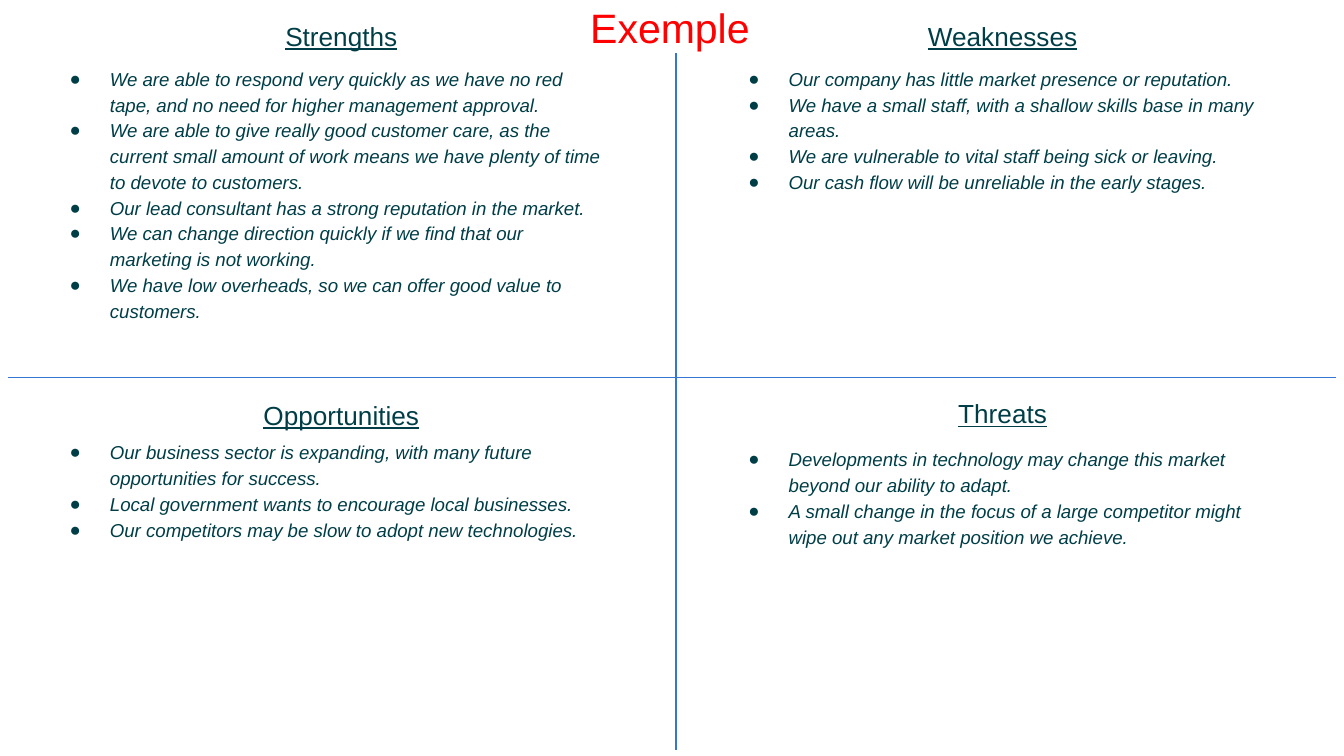
"""Builds a SWOT slide with four quadrants around a central title."""
import pptx
import pptx.dml.color
import pptx.enum.shapes
import pptx.enum.text
import pptx.oxml
import pptx.oxml.ns
import pptx.util

TEAL = pptx.dml.color.RGBColor(0x00, 0x3E, 0x47)
BLUE = pptx.dml.color.RGBColor(0x35, 0x75, 0xD3)
RED = pptx.dml.color.RGBColor(0xFF, 0x00, 0x00)
WHITE = pptx.dml.color.RGBColor(0xFF, 0xFF, 0xFF)
NS = pptx.oxml.ns.nsdecls("a")

deck = pptx.Presentation()
deck.slide_width = pptx.util.Inches(10)
deck.slide_height = deck.slide_width * 9 // 16
unit = deck.slide_width // 100
slide = deck.slides.add_slide(deck.slide_layouts[5])


def place(shape, left, top, width, height, pad):
    shape.left, shape.top = int(left * unit), int(top * unit)
    shape.width, shape.height = int(width * unit), int(height * unit)
    frame = shape.text_frame
    frame.word_wrap = True
    frame.auto_size = pptx.enum.text.MSO_AUTO_SIZE.SHAPE_TO_FIT_TEXT
    frame.vertical_anchor = pptx.enum.text.MSO_ANCHOR.TOP
    frame.margin_left = frame.margin_right = unit
    frame.margin_top = frame.margin_bottom = int(pad * unit)
    return frame


def style(para, size, color):
    font = para.runs[0].font
    font.size = pptx.util.Pt(size)
    font.color.rgb = color
    font.name = "Arial"
    return font


for ends in [(0.6, 28.1, 99.4, 28.1), (50.3, 0.5, 50.3, 55.8)]:
    line = slide.shapes.add_connector(
        pptx.enum.shapes.MSO_CONNECTOR.STRAIGHT, *[int(n * unit) for n in ends])
    line.line.color.rgb = BLUE
    line.line.width = pptx.util.Pt(0.75)
    line.element.spPr.append(pptx.oxml.parse_xml(f"<a:effectLst {NS}/>"))

parts = [
    ("Strengths", 0, 1, 4.3, 24, [
        "We are able to respond very quickly as we have no red tape, and no need for higher management approval.",
        "We are able to give really good customer care, as the current small amount of work means we have plenty of time to devote to customers.",
        "Our lead consultant has a strong reputation in the market.",
        "We can change direction quickly if we find that our marketing is not working.",
        "We have low overheads, so we can offer good value to customers."]),
    ("Weaknesses", 1, 1, 4.3, 12.4, [
        "Our company has little market presence or reputation.",
        "We have a small staff, with a shallow skills base in many areas.",
        "We are vulnerable to vital staff being sick or leaving.",
        "Our cash flow will be unreliable in the early stages."]),
    ("Opportunities", 0, 29.2, 32.1, 12.4, [
        "Our business sector is expanding, with many future opportunities for success.",
        "Local government wants to encourage local businesses.",
        "Our competitors may be slow to adopt new technologies."]),
    ("Threats", 1, 29.1, 32.6, 8.5, [
        "Developments in technology may change this market beyond our ability to adapt.",
        "A small change in the focus of a large competitor might wipe out any market position we achieve."]),
]

for name, col, top, start, height, items in parts:
    box = slide.shapes.add_textbox(0, 0, unit, unit)
    frame = place(box, 2.2 + 49.2 * col, top, 46.4, 3.4, 0.5)
    frame.text = name
    head = frame.paragraphs[0]
    head.alignment = pptx.enum.text.PP_ALIGN.CENTER
    style(head, 14, TEAL).underline = True

    box = slide.shapes.add_textbox(0, 0, unit, unit)
    frame = place(box, 2.2 + 50.5 * col, start, 43.7, height, 0.5)
    frame.text = "\n".join(items)
    for rank, para in enumerate(frame.paragraphs):
        para.line_spacing = 1.15
        para.space_before = pptx.util.Pt(0 if rank else 12)
        style(para, 10, TEAL).italic = True
        props = para._p.get_or_add_pPr()
        props.set("marL", str(5 * unit))
        props.set("indent", str(-3 * unit))
        for mark in (f'<a:buClr {NS}><a:srgbClr val="{TEAL}"/></a:buClr>',
                     f'<a:buFont {NS} typeface="Arial"/>',
                     f'<a:buChar {NS} char="●"/>'):
            props.append(pptx.oxml.parse_xml(mark))

title = slide.shapes.title
frame = place(title, 42.3, -0.8, 15.1, 5.7, 1)
frame.text = "Exemple"
para = frame.paragraphs[0]
para.alignment = pptx.enum.text.PP_ALIGN.CENTER
style(para, 22, RED)
fill = para.runs[0]._r.rPr.find(pptx.oxml.ns.qn("a:solidFill"))
fill.addnext(pptx.oxml.parse_xml(
    f'<a:highlight {NS}><a:srgbClr val="{WHITE}"/></a:highlight>'))
title.element.getparent().append(title.element)

deck.save("out.pptx")
